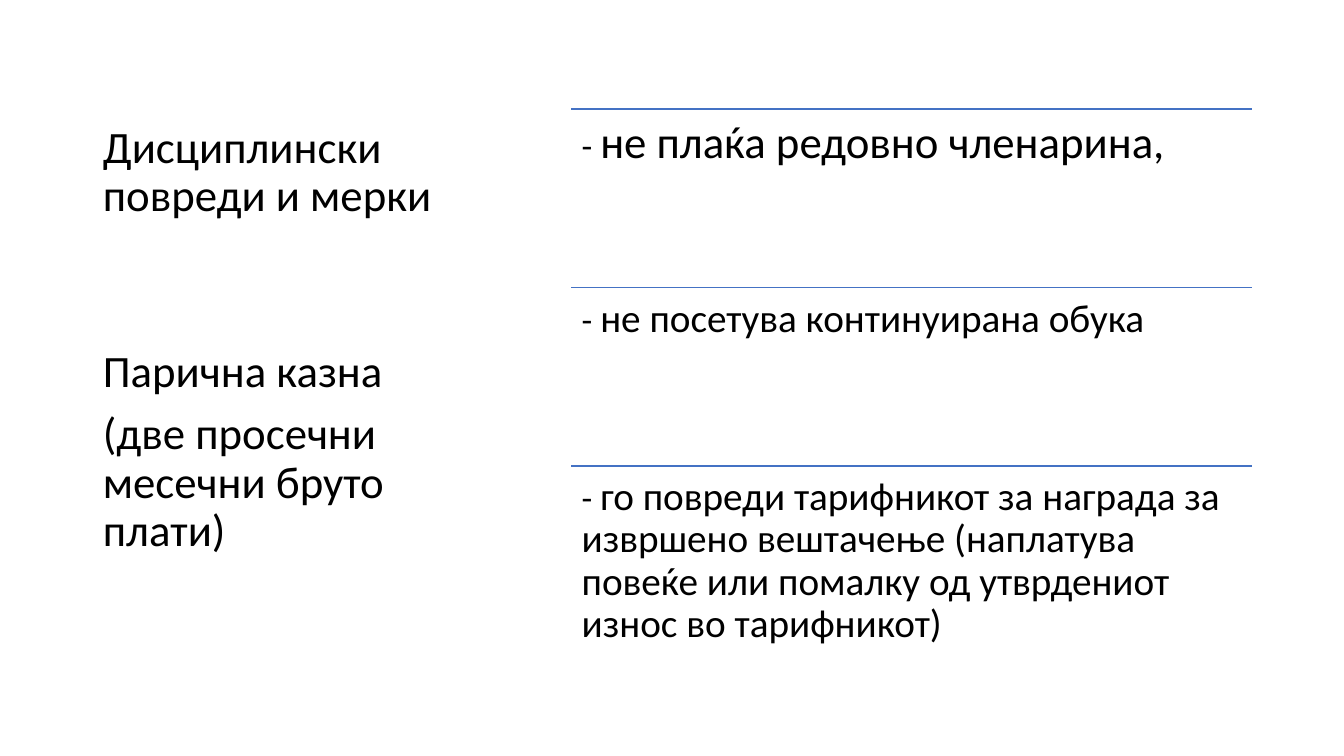
from dataclasses import dataclass

from lxml.etree import SubElement
from pptx import Presentation
from pptx.dml.color import RGBColor
from pptx.enum.shapes import MSO_CONNECTOR
from pptx.enum.text import MSO_ANCHOR
from pptx.oxml.ns import qn
from pptx.slide import Slide
from pptx.util import Emu, Pt

BLACK = RGBColor(0x00, 0x00, 0x00)
BLUE = RGBColor(0x44, 0x72, 0xC4)
FONT = "Calibri"
EMU_PER_PX = 9525

HEADING_LEFT, HEADING_WIDTH = 88, 413
LIST_LEFT, LIST_TOP, LIST_WIDTH, ROW_HEIGHT = 544, 104, 648, 170


@dataclass(frozen=True)
class Span:
    """A stretch of text in one size."""
    text: str
    size: int = 32


@dataclass(frozen=True)
class Violation:
    """A listed violation and its text size."""
    text: str
    size: int


VIOLATIONS = [
    Violation("не плаќа редовно членарина,", 32),
    Violation("не посетува континуирана обука", 28),
    Violation("го повреди тарифникот за награда за извршено вештачење "
              "(наплатува повеќе или помалку од утврдениот износ во тарифникот)", 28),
]


def px(length: int) -> Emu:
    """Convert pixels to EMU."""
    return Emu(length * EMU_PER_PX)


def add_text(page: Slide, paragraphs: list[list[Span]], *, left: int, top: int,
             width: int, height: int, anchor: MSO_ANCHOR = MSO_ANCHOR.TOP,
             inset: int = 5, gap: int = 0) -> None:
    """Add a wrapped text box with one or more paragraphs."""
    box = page.shapes.add_textbox(px(left), px(top), px(width), px(height))
    frame = box.text_frame
    frame.word_wrap = True
    frame.vertical_anchor = anchor
    frame.margin_left = frame.margin_right = px(10)
    frame.margin_top = frame.margin_bottom = px(inset)
    for index, spans in enumerate(paragraphs):
        para = frame.add_paragraph() if index else frame.paragraphs[0]
        para.line_spacing = 0.9
        para.space_before = Pt(gap if index else 0)
        for span in spans:
            run = para.add_run()
            run.text = span.text
            run.font.name = FONT
            run.font.size = Pt(span.size)
            run.font.color.rgb = BLACK


def add_rule(page: Slide, top: int) -> None:
    """Draw the horizontal line above a violation."""
    rule = page.shapes.add_connector(MSO_CONNECTOR.STRAIGHT, px(LIST_LEFT), px(top),
                                     px(LIST_LEFT + LIST_WIDTH), px(top))
    rule.line.color.rgb = BLUE
    rule.line.width = Pt(1)
    SubElement(rule._element.spPr, qn("a:effectLst"))


def add_violation(page: Slide, violation: Violation, top: int) -> None:
    """Draw one row of the list."""
    add_rule(page, top)
    add_text(page, [[Span("- ", 25), Span(violation.text, violation.size)]],
             left=LIST_LEFT, top=top, width=LIST_WIDTH, height=ROW_HEIGHT, inset=10)


def main() -> None:
    """Build and save the slide."""
    deck = Presentation()
    deck.slide_width, deck.slide_height = px(1280), px(720)
    page = deck.slides.add_slide(deck.slide_layouts[6])
    add_text(page, [[Span("Дисциплински повреди и мерки")]], left=HEADING_LEFT, top=48,
             width=HEADING_WIDTH, height=168, anchor=MSO_ANCHOR.BOTTOM)
    for row, violation in enumerate(VIOLATIONS):
        add_violation(page, violation, LIST_TOP + row * ROW_HEIGHT)
    add_text(page, [[Span("Парична казна")], [Span("(две просечни месечни бруто плати)")]],
             left=HEADING_LEFT, top=327, width=HEADING_WIDTH, height=289, gap=10)
    deck.save("out.pptx")


if __name__ == "__main__":
    main()
